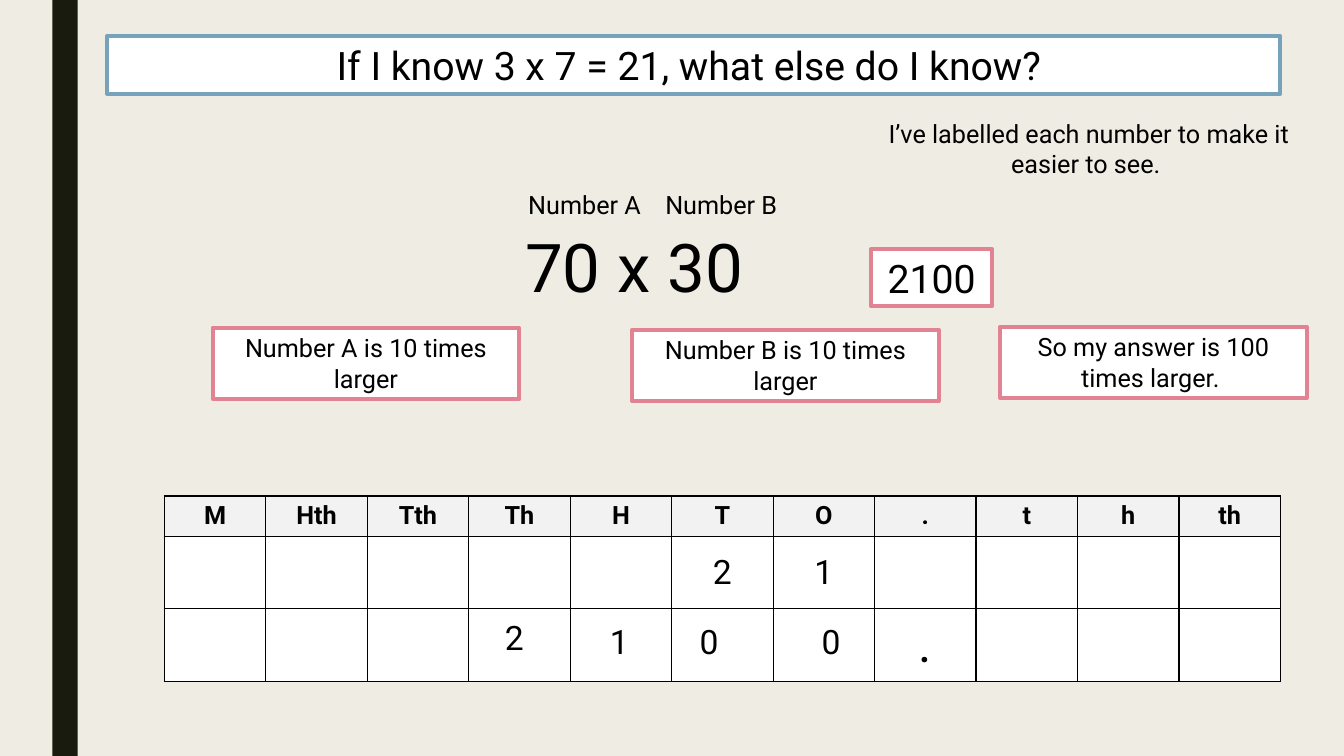
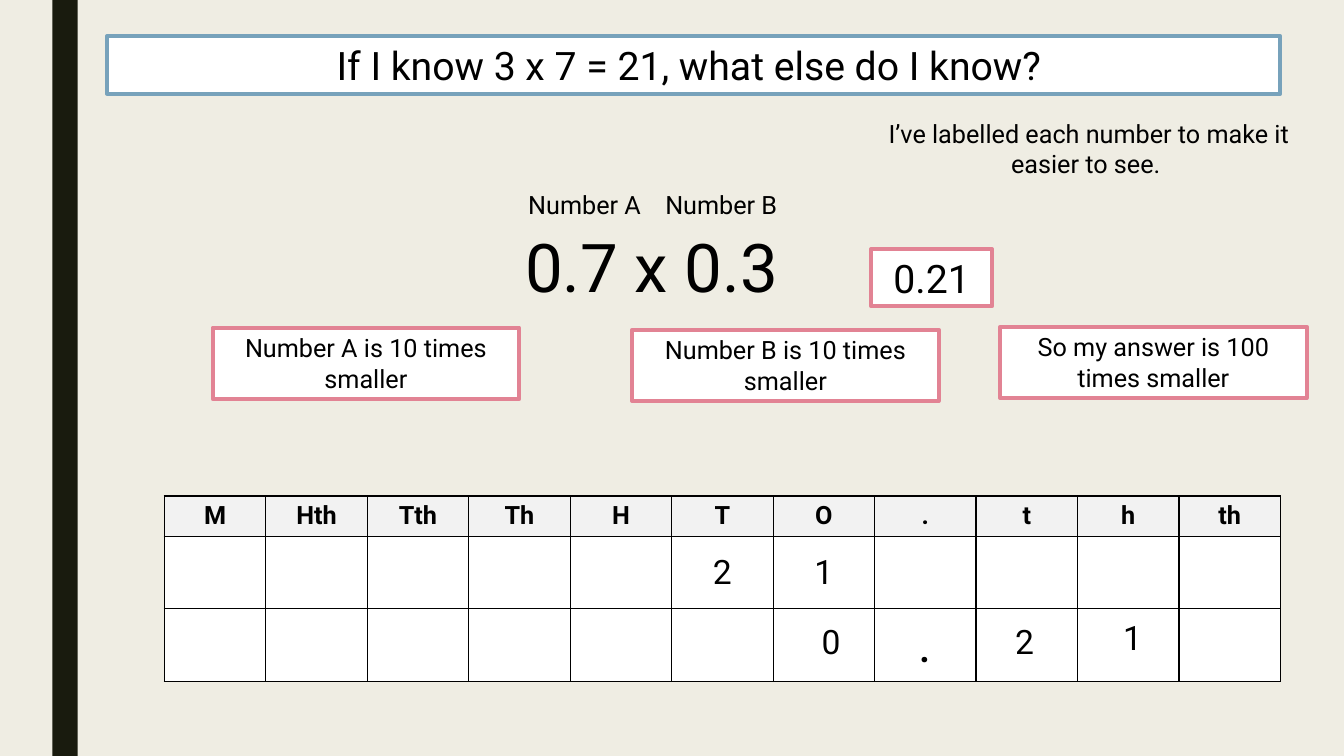
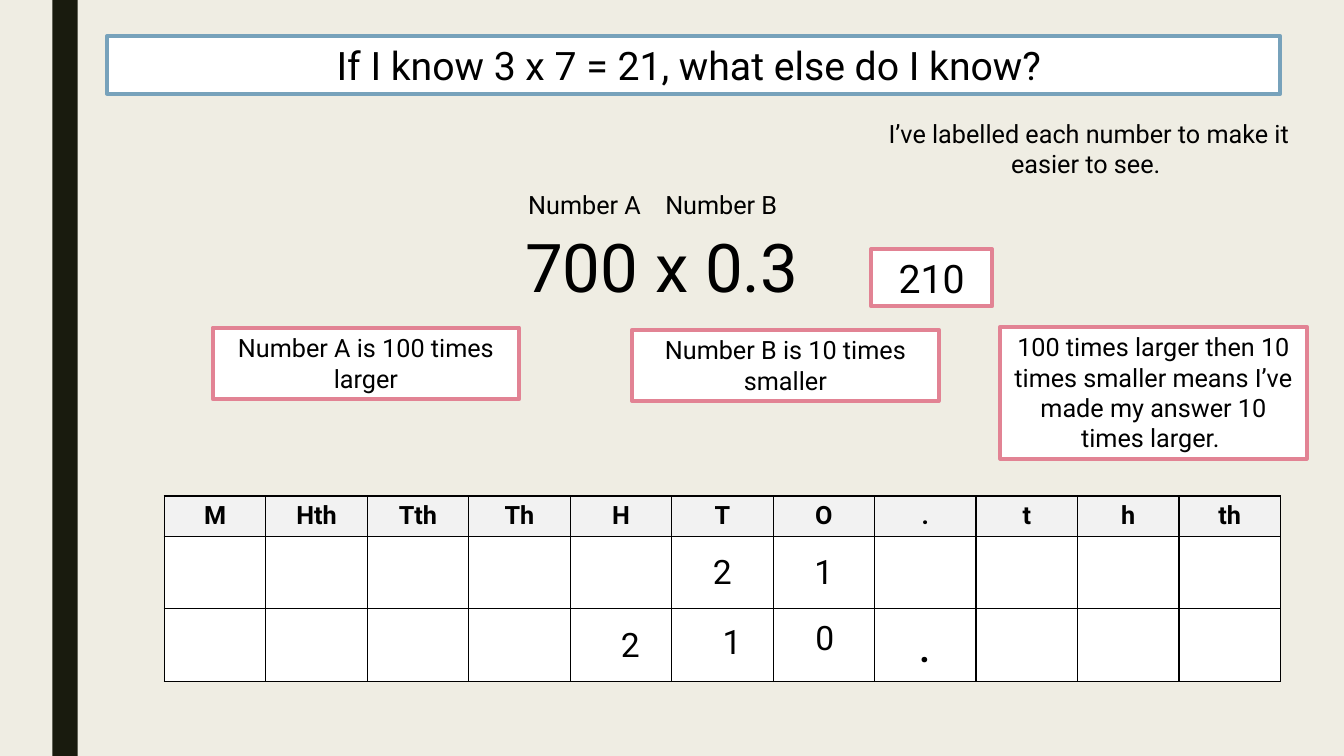
from lxml import etree
from pptx import Presentation
from pptx.dml.color import RGBColor
from pptx.enum.shapes import MSO_SHAPE
from pptx.enum.text import MSO_ANCHOR, MSO_AUTO_SIZE, PP_ALIGN
from pptx.oxml.ns import qn
from pptx.util import Inches, Pt

RECTANGLE = MSO_SHAPE.RECTANGLE
TOP, MIDDLE = MSO_ANCHOR.TOP, MSO_ANCHOR.MIDDLE
FIT_SHAPE = MSO_AUTO_SIZE.SHAPE_TO_FIT_TEXT
LEFT, CENTER = PP_ALIGN.LEFT, PP_ALIGN.CENTER

CREAM = RGBColor(0xEF, 0xED, 0xE3)
DARK = RGBColor(0x19, 0x1B, 0x0E)
WHITE = RGBColor(0xFF, 0xFF, 0xFF)
BLACK = RGBColor(0, 0, 0)
GREY = RGBColor(0xF2, 0xF2, 0xF2)
BLUE = RGBColor(0x77, 0xA2, 0xBB)
PINK = RGBColor(0xE2, 0x83, 0x94)

FONT = "Roboto"
BODY, DIGIT, LARGE, POINT, FORMULA = 18, 24, 28, 36, 48

# Place value chart
HEADINGS = ["M", "Hth", "Tth", "Th", "H", "T", "O", ".", "t", "h", "th"]
TABLE_AREA = (1.63, 4.92, 11.07, 1.84)
ROW_HEIGHTS = [0.4, 0.72, 0.72]
FIXED_CELLS = {(1, 5): ("2", DIGIT), (1, 6): ("1", DIGIT), (2, 7): (".", POINT)}

# Each digit is (text, left, top); each formula is (text, box width)
EXAMPLES = [
    {
        "formula": ("70 x 30", 2.4),
        "answer": "2100",
        "number_a": "Number A is 10 times larger",
        "number_b": "Number B is 10 times larger",
        "conclusion": ("So my answer is 100 times larger. ", 0.71),
        "digits": [("2", 4.91, 6.07), ("1", 5.95, 6.11),
                   ("0", 6.84, 6.11), ("0", 8.05, 6.11)],
    },
    {
        "formula": ("0.7 x 0.3", 2.74),
        "answer": "0.21",
        "number_a": "Number A is 10 times smaller",
        "number_b": "Number B is 10 times smaller",
        "conclusion": ("So my answer is 100 times smaller", 0.71),
        "digits": [("0", 8.05, 6.11), ("2", 9.97, 6.11), ("1", 11.04, 6.07)],
    },
    {
        "formula": ("700 x 0.3", 2.96),
        "answer": "210",
        "number_a": "Number A is 100 times larger",
        "number_b": "Number B is 10 times smaller",
        "conclusion": ("100 times larger then 10 times smaller means I’ve "
                       "made my answer 10 times larger. ", 1.31),
        "digits": [("2", 6.06, 6.14), ("1", 7.07, 6.11), ("0", 7.99, 6.07)],
    },
]


def write(frame, text, size, align, bold=False):
    para = frame.paragraphs[0]
    para.alignment = align
    span = para.add_run()
    span.text = text
    span.font.name = FONT
    span.font.size = Pt(size)
    span.font.bold = bold
    span.font.color.rgb = BLACK


def add_rectangle(page, area, fill, line=None):
    box = page.shapes.add_shape(RECTANGLE, *map(Inches, area))
    box.shadow.inherit = False
    box.fill.solid()
    box.fill.fore_color.rgb = fill
    if line is None:
        box.line.fill.background()
    else:
        box.line.color.rgb = line
        box.line.width = Pt(2.75)
    return box


def add_panel(page, text, area, line=PINK, size=BODY):
    frame = add_rectangle(page, area, WHITE, line).text_frame
    frame.word_wrap = True
    frame.auto_size = FIT_SHAPE
    frame.vertical_anchor = TOP
    write(frame, text, size, CENTER)


def add_label(page, text, area, size=BODY, align=LEFT, wrap=False):
    frame = page.shapes.add_textbox(*map(Inches, area)).text_frame
    frame.word_wrap = wrap
    frame.auto_size = FIT_SHAPE
    write(frame, text, size, align)


def set_borders(cell):
    properties = cell._tc.get_or_add_tcPr()
    for index, side in enumerate(("lnL", "lnR", "lnT", "lnB")):
        border = etree.Element(qn(f"a:{side}"), w=str(Pt(1)))
        fill = etree.SubElement(border, qn("a:solidFill"))
        etree.SubElement(fill, qn("a:srgbClr"), val=str(BLACK))
        properties.insert(index, border)


def add_place_value_chart(page):
    table = page.shapes.add_table(
        len(ROW_HEIGHTS), len(HEADINGS), *map(Inches, TABLE_AREA)).table
    table.first_row = False
    table.horz_banding = False
    for column in table.columns:
        column.width = Inches(TABLE_AREA[2] / len(HEADINGS))
    for row_index, height in enumerate(ROW_HEIGHTS):
        table.rows[row_index].height = Inches(height)
        for column_index, heading in enumerate(HEADINGS):
            cell = table.cell(row_index, column_index)
            cell.fill.solid()
            cell.fill.fore_color.rgb = GREY if row_index == 0 else WHITE
            set_borders(cell)
            if row_index == 0:
                write(cell.text_frame, heading, BODY, CENTER, bold=True)
            elif (row_index, column_index) in FIXED_CELLS:
                cell.vertical_anchor = MIDDLE
                text, size = FIXED_CELLS[row_index, column_index]
                write(cell.text_frame, text, size, CENTER)


def add_frame(page):
    """Side band, title, helper labels and chart shared by every slide."""
    add_rectangle(page, (0.52, 0, 0.25, 7.5), DARK)
    add_panel(page, "If I know 3 x 7 = 21, what else do I know? ",
              (1.06, 0.36, 11.64, 0.57), BLUE, LARGE)
    add_place_value_chart(page)
    add_label(page, "Number A", (5.14, 1.83, 1.32, 0.4))
    add_label(page, "Number B", (6.5, 1.83, 1.34, 0.4))
    add_label(page, "I’ve labelled each number to make it easier to see. ",
              (8.65, 1.12, 4.3, 0.71), align=CENTER, wrap=True)


def add_example(page, example):
    # Calculation and answer
    formula, width = example["formula"]
    add_label(page, formula, (5.11, 2.19, width, 0.91), FORMULA)
    add_panel(page, example["answer"], (8.64, 2.47, 1.2, 0.57), size=LARGE)
    # Reasoning
    add_panel(page, example["number_a"], (2.11, 3.25, 3.04, 0.71))
    add_panel(page, example["number_b"], (6.27, 3.27, 3.04, 0.71))
    conclusion, height = example["conclusion"]
    add_panel(page, conclusion, (9.92, 3.24, 3.04, height))
    # Digits of the answer
    for digit, left, top in example["digits"]:
        add_label(page, digit, (left, top, 0.4, 0.5), DIGIT)


def main():
    deck = Presentation()
    deck.slide_width, deck.slide_height = Inches(13.33), Inches(7.5)
    background = deck.slide_master.background.fill
    background.solid()
    background.fore_color.rgb = CREAM
    for example in EXAMPLES:
        page = deck.slides.add_slide(deck.slide_layouts[6])
        add_frame(page)
        add_example(page, example)
    deck.save("out.pptx")


if __name__ == "__main__":
    main()
